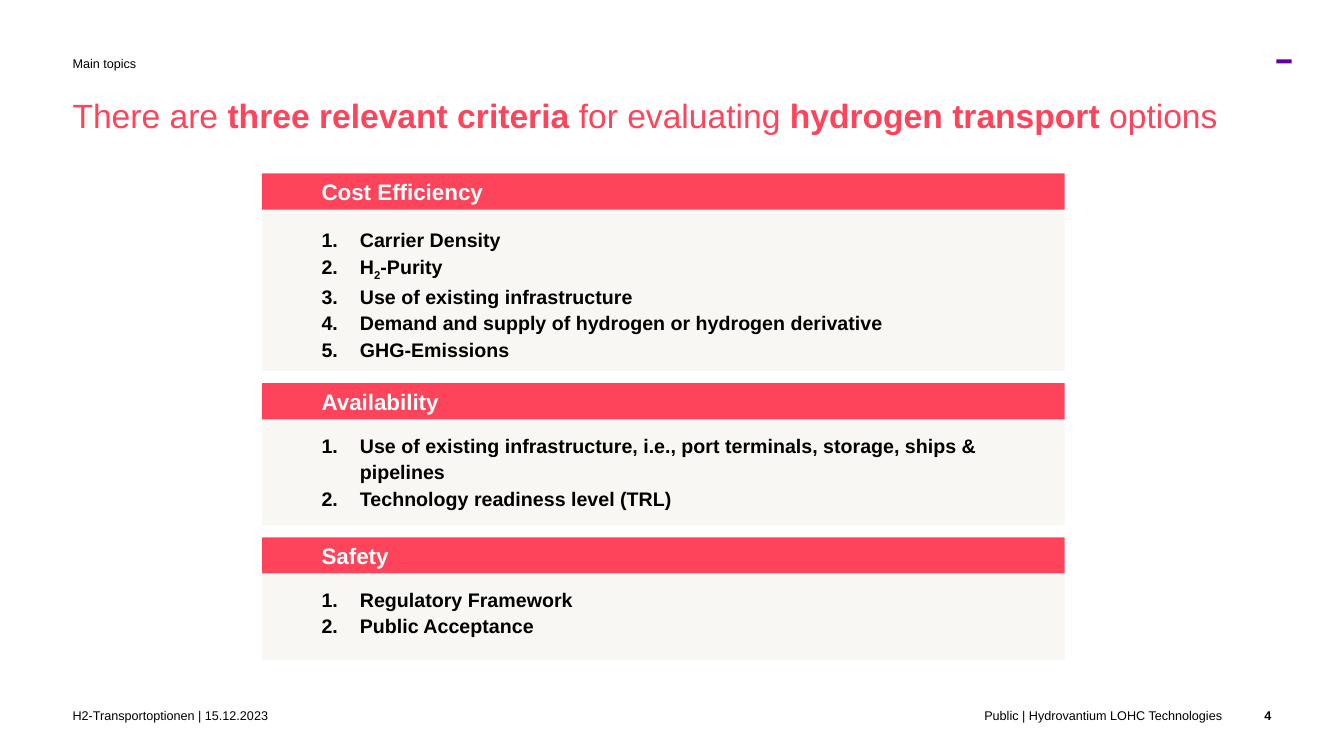
from lxml import etree
from pptx import Presentation
from pptx.dml.color import RGBColor
from pptx.enum.shapes import MSO_SHAPE
from pptx.enum.text import MSO_ANCHOR, PP_ALIGN
from pptx.oxml.ns import qn
from pptx.util import Inches, Pt

RECTANGLE = MSO_SHAPE.RECTANGLE
TOP, MIDDLE = MSO_ANCHOR.TOP, MSO_ANCHOR.MIDDLE
LEFT, RIGHT = PP_ALIGN.LEFT, PP_ALIGN.RIGHT

SLIDE_WIDTH, SLIDE_HEIGHT = Inches(13.33), Inches(7.5)
CORAL, SAND, BLACK, WHITE, PURPLE = "FD445A", "F9F7F3", "000000", "FFFFFF", "6400A0"
MARGIN = 5.4
CARD_LEFT, CARD_WIDTH = 19.5, 59.71
HEADING_HEIGHT, CARD_GAP, FIRST_CARD_TOP = 4.8, 1.6, 22.93
FOOTER_TOP, FOOTER_HEIGHT = 93.6, 2.13

TITLE = [("There are ", ""), ("three relevant criteria ", "bold"),
         ("for evaluating ", ""), ("hydrogen transport ", "bold"), ("options", "")]

CRITERIA = [
    ("Cost Efficiency", 4.67, 21.47, [
        [("Carrier Density", "bold")],
        [("H", "bold"), ("2", "bold sub"), ("-Purity", "bold")],
        [("Use of existing infrastructure", "bold")],
        [("Demand and supply of hydrogen or hydrogen derivative", "bold")],
        [("GHG-Emissions", "bold")],
    ]),
    ("Availability", 4.13, 14.67, [
        [("Use of existing infrastructure, i.e., port terminals, storage, ships & pipelines", "bold")],
        [("Technology readiness level (TRL)", "bold")],
    ]),
    ("Safety", 4.13, 12.13, [
        [("Regulatory Framework", "bold")],
        [("Public Acceptance", "bold")],
    ]),
]

FOOTER = [
    (MARGIN, 61.07, "H2-Transportoptionen | 15.12.2023", "", LEFT),
    (67.59, 23.33, "Public | Hydrovantium LOHC Technologies", "", RIGHT),
    (91.97, 2.63, "4", "bold", RIGHT),
]


def color(value):
    """Turn a hex string into a colour."""
    return RGBColor.from_string(value)


def place(left, top, width, height):
    """Turn percentages of the slide into a position and size."""
    return (int(SLIDE_WIDTH * left / 100), int(SLIDE_HEIGHT * top / 100),
            int(SLIDE_WIDTH * width / 100), int(SLIDE_HEIGHT * height / 100))


def set_frame(frame, insets, anchor=TOP):
    """Wrap the text and set its margins and vertical anchor."""
    frame.word_wrap = True
    frame.vertical_anchor = anchor
    frame.margin_left, frame.margin_top, frame.margin_right, frame.margin_bottom = map(Inches, insets)


def write(paragraph, parts, size, ink, align=LEFT, spacing=1.0):
    """Fill a paragraph with styled runs."""
    paragraph.alignment = align
    paragraph.line_spacing = spacing
    for words, style in parts:
        run = paragraph.add_run()
        run.text = words
        run.font.name = "Arial"
        run.font.size = Pt(size)
        run.font.bold = "bold" in style
        run.font.color.rgb = color(ink)
        if "sub" in style:
            run._r.get_or_add_rPr().set("baseline", "-25000")


def number(paragraph):
    """Give a paragraph a hanging automatic number."""
    properties = paragraph._p.get_or_add_pPr()
    properties.set("marL", str(Inches(0.38)))
    properties.set("indent", str(-Inches(0.38)))
    etree.SubElement(properties, qn("a:buAutoNum"), type="arabicPeriod")


def add_label(slide, area, parts, size, ink, align=LEFT, spacing=1.0):
    """Add a line of text without margins."""
    frame = slide.shapes.add_textbox(*place(*area)).text_frame
    set_frame(frame, (0, 0, 0, 0))
    write(frame.paragraphs[0], parts, size, ink, align, spacing)


def add_block(slide, area, fill, anchor=TOP):
    """Add a plain filled rectangle and return its text frame."""
    block = slide.shapes.add_shape(RECTANGLE, *place(*area))
    block.shadow.inherit = False
    block.fill.solid()
    block.fill.fore_color.rgb = color(fill)
    block.line.fill.background()
    set_frame(block.text_frame, (0.59, 0.16, 0.16, 0.16), anchor)
    return block.text_frame


def add_criterion(slide, top, heading, offset, height, points):
    """Add a numbered panel under its heading bar and return the bottom edge."""
    panel = add_block(slide, (CARD_LEFT, top + offset, CARD_WIDTH, height), SAND)
    for index, point in enumerate(points):
        paragraph = panel.add_paragraph() if index else panel.paragraphs[0]
        write(paragraph, point, 14, BLACK, spacing=1.13)
        number(paragraph)
    bar = add_block(slide, (CARD_LEFT, top, CARD_WIDTH, HEADING_HEIGHT), CORAL, MIDDLE)
    write(bar.paragraphs[0], [(heading, "bold")], 16, WHITE)
    return top + offset + height


def main():
    """Build the slide and save it."""
    deck = Presentation()
    deck.slide_width, deck.slide_height = SLIDE_WIDTH, SLIDE_HEIGHT
    slide = deck.slides.add_slide(deck.slide_layouts[6])
    add_block(slide, (94.97, 7.87, 1.13, 0.53), PURPLE)
    add_label(slide, (MARGIN, 12.27, 85.45, 5.73), TITLE, 24, CORAL, spacing=1.05)
    top = FIRST_CARD_TOP
    for criterion in CRITERIA:
        top = add_criterion(slide, top, *criterion) + CARD_GAP
    add_label(slide, (MARGIN, 7.33, 69.69, 2.67), [("Main topics", "")], 9, BLACK)
    for left, width, words, style, align in FOOTER:
        add_label(slide, (left, FOOTER_TOP, width, FOOTER_HEIGHT), [(words, style)], 9, BLACK, align)
    deck.save("out.pptx")


if __name__ == "__main__":
    main()
